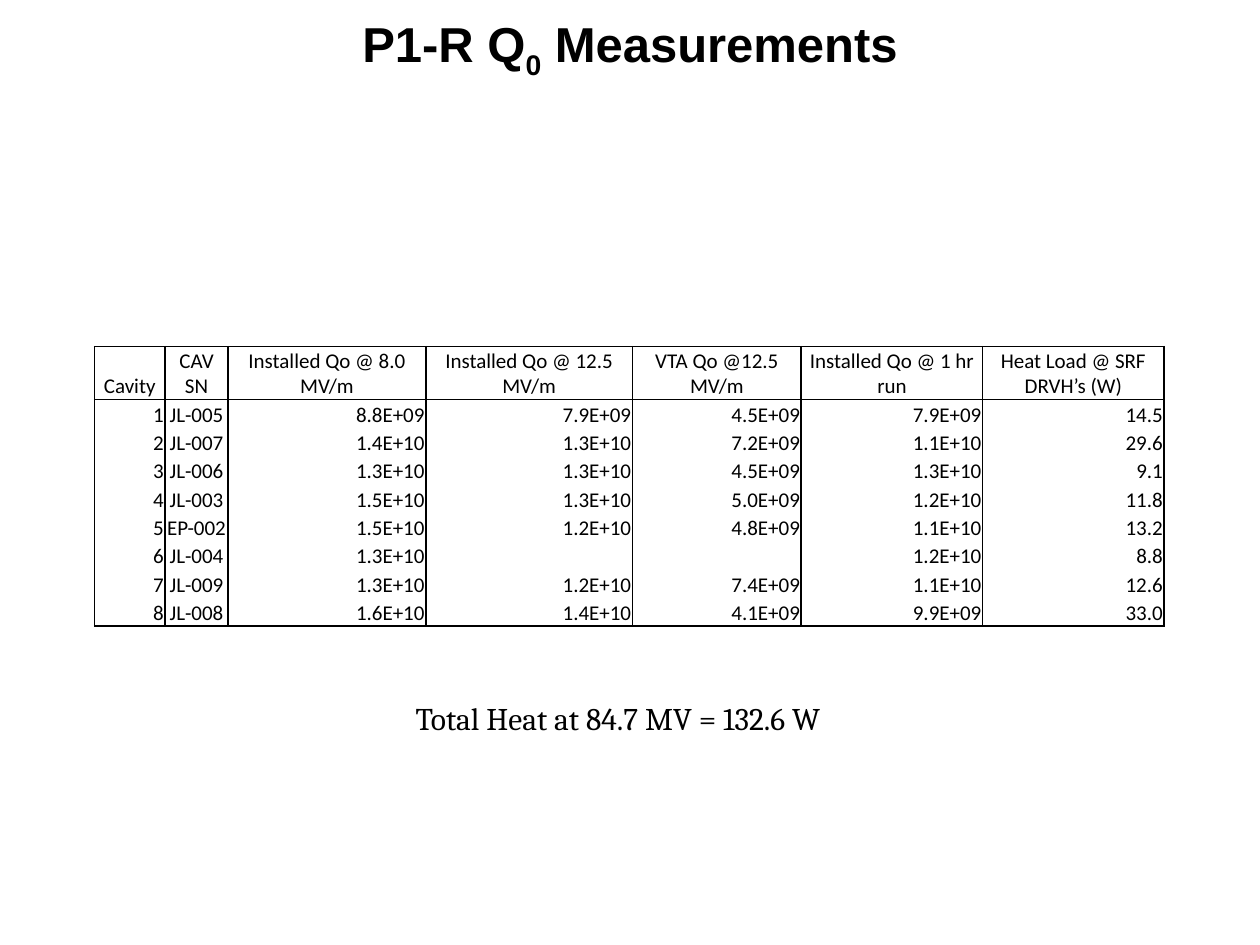
"""Build the cavity Q0 measurement slide."""
from typing import NamedTuple

from lxml.etree import SubElement
from pptx import Presentation
from pptx.dml.color import RGBColor
from pptx.enum.text import MSO_ANCHOR, PP_ALIGN
from pptx.oxml.ns import qn
from pptx.util import Inches, Pt

WIDE, HIGH = 10, 7.5
HUES = {"ink": "000000"}
INK = RGBColor.from_string(HUES["ink"])
HEAD_HIGH, BODY_HIGH = 0.42, 1.8


class Area(NamedTuple):
    """Place on the slide as shares of its width and height."""
    left: float
    top: float
    width: float
    height: float

    def spots(self) -> list:
        """Return left, top, width and height as lengths."""
        return [Inches(share * side) for share, side in zip(self, (WIDE, HIGH) * 2)]


class Piece(NamedTuple):
    """A piece of text with its baseline shift."""
    text: str
    shift: int = 0


class Note(NamedTuple):
    """A text box with its format."""
    area: Area
    words: list
    frame: dict
    para: dict
    font: dict


class Column(NamedTuple):
    """A table column: title, width, alignment and values."""
    title: str
    width: float
    align: PP_ALIGN
    cells: list


NOTES = [
    Note(Area(0.075, 0, 0.85, 0.1),
         [Piece("P1-R Q"), Piece("0", -25000), Piece(" Measurements")],
         {"word_wrap": True, "vertical_anchor": MSO_ANCHOR.MIDDLE},
         {"alignment": PP_ALIGN.CENTER},
         {"name": "Arial", "size": Pt(28), "bold": True}),
    Note(Area(0.32, 5.5 / HIGH, 0.36, 0.4 / HIGH),
         [Piece("Total Heat at 84.7 MV = 132.6 W")],
         {"word_wrap": False}, {"alignment": PP_ALIGN.LEFT},
         {"name": "Cambria", "size": Pt(18)}),
]
MID, END = PP_ALIGN.CENTER, PP_ALIGN.RIGHT
COLUMNS = [
    Column("Cavity", 0.56, END, [str(num) for num in range(1, 9)]),
    Column("CAV SN", 0.5, MID, ["JL-005", "JL-007", "JL-006", "JL-003",
                                "EP-002", "JL-004", "JL-009", "JL-008"]),
    Column("Installed Qo @ 8.0 MV/m", 1.57, END,
           ["8.8E+09", "1.4E+10", "1.3E+10", "1.5E+10",
            "1.5E+10", "1.3E+10", "1.3E+10", "1.6E+10"]),
    Column("Installed Qo @ 12.5 MV/m", 1.64, END,
           ["7.9E+09", "1.3E+10", "1.3E+10", "1.3E+10",
            "1.2E+10", "", "1.2E+10", "1.4E+10"]),
    Column("VTA Qo @12.5 MV/m", 1.34, END,
           ["4.5E+09", "7.2E+09", "4.5E+09", "5.0E+09",
            "4.8E+09", "", "7.4E+09", "4.1E+09"]),
    Column("Installed Qo @ 1 hr run", 1.44, END,
           ["7.9E+09", "1.1E+10", "1.3E+10", "1.2E+10",
            "1.1E+10", "1.2E+10", "1.1E+10", "9.9E+09"]),
    Column("Heat Load @ SRF DRVH’s (W)", 1.44, END,
           ["14.5", "29.6", "9.1", "11.8", "13.2", "8.8", "12.6", "33.0"]),
]
GRID = Area(0.075, 2.75 / HIGH, 0.85, (HEAD_HIGH + BODY_HIGH) / HIGH)
CELL = {"vertical_anchor": MSO_ANCHOR.BOTTOM, "margin_left": Inches(0.01),
        "margin_right": Inches(0.01), "margin_top": Inches(0.01), "margin_bottom": 0}
CELL_FONT = {"name": "Calibri", "size": Pt(12), "bold": False}


def apply(target: object, values: dict) -> None:
    """Set every attribute named in the format values."""
    for name, value in values.items():
        setattr(target, name, value)


def write(para, words: list, font: dict) -> None:
    """Add formatted runs to a paragraph."""
    for piece in words:
        run = para.add_run()
        run.text = piece.text
        apply(run.font, font)
        run.font.color.rgb = INK
        if piece.shift:
            run._r.get_or_add_rPr().set("baseline", str(piece.shift))


def draw_note(slide, note: Note) -> None:
    """Draw one text box."""
    frame = slide.shapes.add_textbox(*note.area.spots()).text_frame
    apply(frame, note.frame)
    para = frame.paragraphs[0]
    apply(para, note.para)
    write(para, note.words, note.font)


def border(cell, sides: str) -> None:
    """Rule the named sides of a cell and clear the others."""
    props = cell._tc.get_or_add_tcPr()
    for side in "LRTB":
        line = SubElement(props, qn(f"a:ln{side}"), w=str(Pt(1)))
        if side in sides:
            fill = SubElement(line, qn("a:solidFill"))
            SubElement(fill, qn("a:srgbClr"), val=HUES["ink"])
        else:
            SubElement(line, qn("a:noFill"))


def fill_cell(cell, text: str, align: PP_ALIGN, sides: str) -> None:
    """Write and style one table cell."""
    apply(cell, CELL)
    border(cell, sides)
    cell.fill.background()
    para = cell.text_frame.paragraphs[0]
    para.alignment = align
    if text:
        write(para, [Piece(text)], CELL_FONT)
    else:
        SubElement(para._p, qn("a:endParaRPr"), sz="1200")


def draw_table(slide, columns: list) -> None:
    """Draw the table of measurements."""
    count = len(columns[0].cells)
    table = slide.shapes.add_table(count + 1, len(columns), *GRID.spots()).table
    apply(table, {"first_row": False, "horz_banding": False})
    for row in range(count + 1):
        table.rows[row].height = Inches(BODY_HIGH / count if row else HEAD_HIGH)
    for col, column in enumerate(columns):
        table.columns[col].width = Inches(column.width)
        fill_cell(table.cell(0, col), column.title, MID, "LRTB")
        for row, text in enumerate(column.cells, 1):
            sides = "LR" + "T" * (row == 1) + "B" * (row == count)
            fill_cell(table.cell(row, col), text, column.align, sides)


def main() -> None:
    """Build and save the slide."""
    deck = Presentation()
    apply(deck, {"slide_width": Inches(WIDE), "slide_height": Inches(HIGH)})
    slide = deck.slides.add_slide(deck.slide_layouts[6])
    draw_table(slide, COLUMNS)
    for note in NOTES:
        draw_note(slide, note)
    deck.save("out.pptx")


if __name__ == "__main__":
    main()
